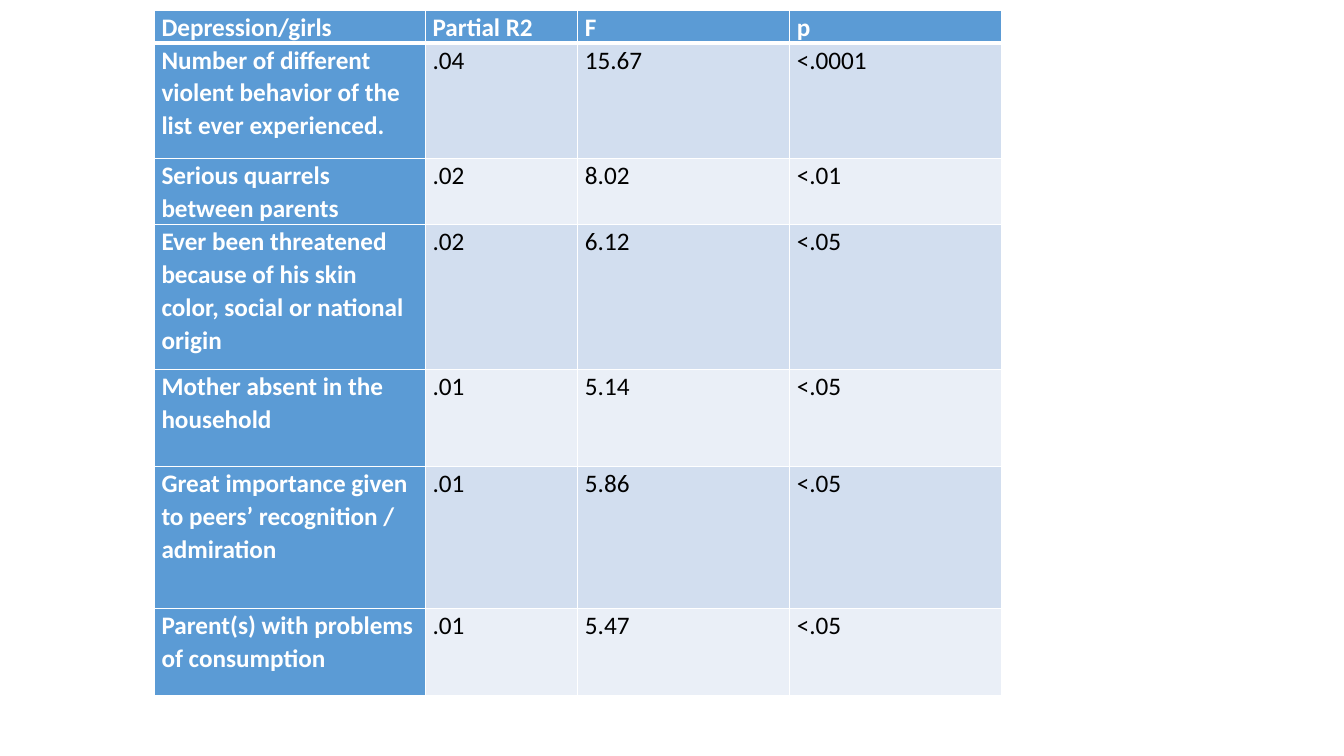
"""Build a slide with a regression table on depression among girls."""
from dataclasses import dataclass

from lxml import etree
from pptx import Presentation
from pptx.dml.color import RGBColor
from pptx.enum.text import PP_ALIGN
from pptx.oxml.ns import qn
from pptx.util import Cm, Pt

LEFT, JUSTIFY = PP_ALIGN.LEFT, PP_ALIGN.JUSTIFY
BLANK_LAYOUT = 6


@dataclass(frozen=True)
class Theme:
    font: str = "Calibri"
    size: int = 18
    line_spacing: float = 1.07
    accent: str = "5B9BD5"
    bands: tuple = ("D2DEEF", "EAEFF7")
    white: str = "FFFFFF"
    black: str = "000000"
    thin: int = 1
    thick: int = 3


THEME = Theme()
COLUMN_WIDTHS = (6.83, 3.84, 5.34, 5.34)
ROW_HEIGHTS = (0.81, 2.92, 1.66, 3.65, 2.45, 3.58, 2.18)
ROWS = (
    ("Depression/girls", "Partial R2", "F", "p"),
    ("Number of different violent behavior of the list ever experienced.",
     ".04", "15.67", "<.0001"),
    ("Serious quarrels between parents", ".02", "8.02", "<.01"),
    ("Ever been threatened because of his skin color, social or national origin",
     ".02", "6.12", "<.05"),
    ("Mother absent in the household", ".01", "5.14", "<.05"),
    ("Great importance given to peers’ recognition / admiration",
     ".01", "5.86", "<.05"),
    ("Parent(s) with problems of consumption", ".01", "5.47", "<.05"),
)


def set_borders(cell, top, bottom):
    properties = cell._tc.get_or_add_tcPr()
    widths = {"a:lnL": THEME.thin, "a:lnR": THEME.thin,
              "a:lnT": top, "a:lnB": bottom}
    for tag, width in widths.items():
        line = etree.SubElement(properties, qn(tag), w=str(Pt(width)))
        fill = etree.SubElement(line, qn("a:solidFill"))
        etree.SubElement(fill, qn("a:srgbClr"), val=THEME.white)


def write_text(cell, text, color, bold, align):
    para = cell.text_frame.paragraphs[0]
    para.alignment = align
    para.line_spacing = THEME.line_spacing
    span = para.add_run()
    span.text = text
    span.font.name = THEME.font
    span.font.size = Pt(THEME.size)
    span.font.bold = bold
    span.font.color.rgb = RGBColor.from_string(color)


def format_cell(cell, text, row, column):
    heading = row == 0 or column == 0
    cell.margin_left = cell.margin_right = Cm(0.18)
    cell.margin_top = cell.margin_bottom = 0
    set_borders(cell,
                top=THEME.thick if row == 1 else THEME.thin,
                bottom=THEME.thick if row == 0 else THEME.thin)
    fill = THEME.accent if heading else THEME.bands[(row - 1) % 2]
    cell.fill.solid()
    cell.fill.fore_color.rgb = RGBColor.from_string(fill)
    write_text(cell, text,
               color=THEME.white if heading else THEME.black,
               bold=heading,
               align=LEFT if row and column == 0 else JUSTIFY)


def add_results_table(page, left, top):
    frame = page.shapes.add_table(
        len(ROWS), len(COLUMN_WIDTHS), Cm(left), Cm(top),
        Cm(sum(COLUMN_WIDTHS)), Cm(sum(ROW_HEIGHTS)))
    table = frame.table
    table.first_col = True
    for column, width in zip(table.columns, COLUMN_WIDTHS):
        column.width = Cm(width)
    for row, height in zip(table.rows, ROW_HEIGHTS):
        row.height = Cm(height)
    for row, texts in enumerate(ROWS):
        for column, text in enumerate(texts):
            format_cell(table.cell(row, column), text, row, column)


def main():
    deck = Presentation()
    deck.slide_width, deck.slide_height = Cm(33.87), Cm(19.05)
    page = deck.slides.add_slide(deck.slide_layouts[BLANK_LAYOUT])
    add_results_table(page, left=3.89, top=0.25)
    deck.save("out.pptx")


if __name__ == "__main__":
    main()
